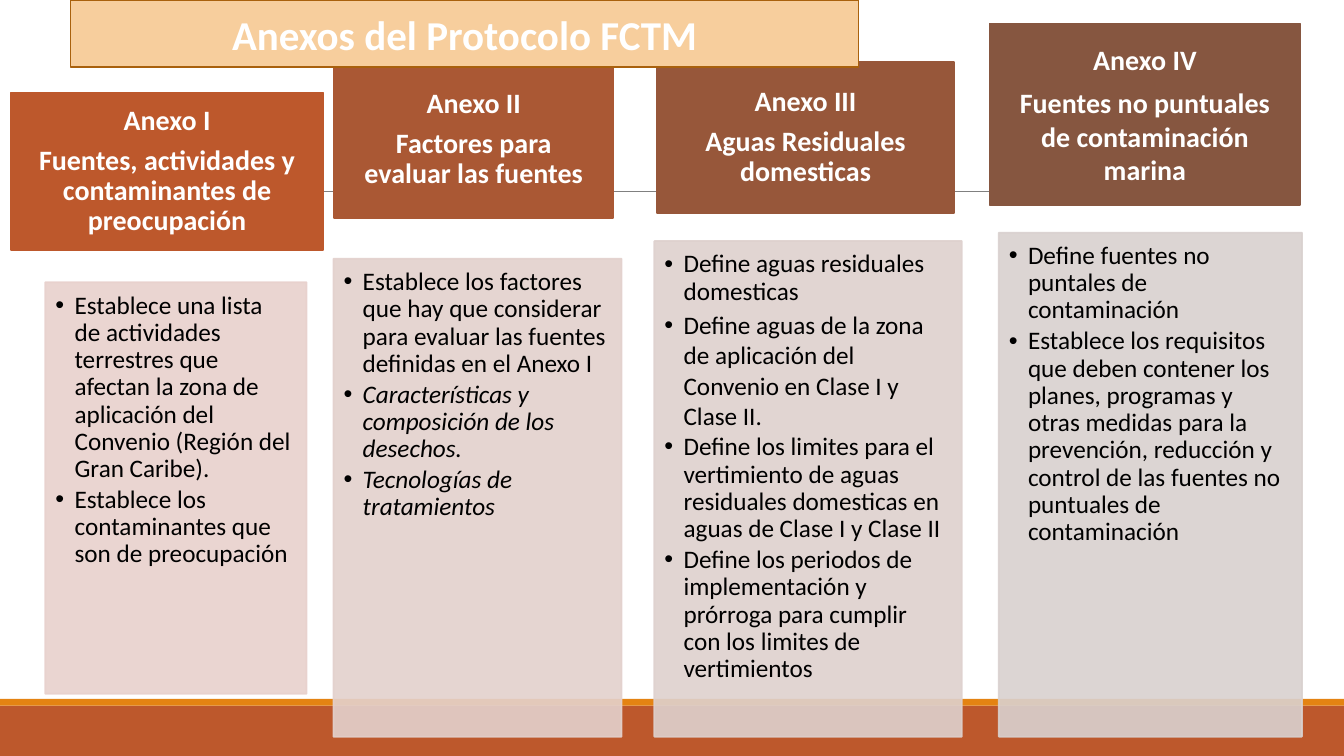
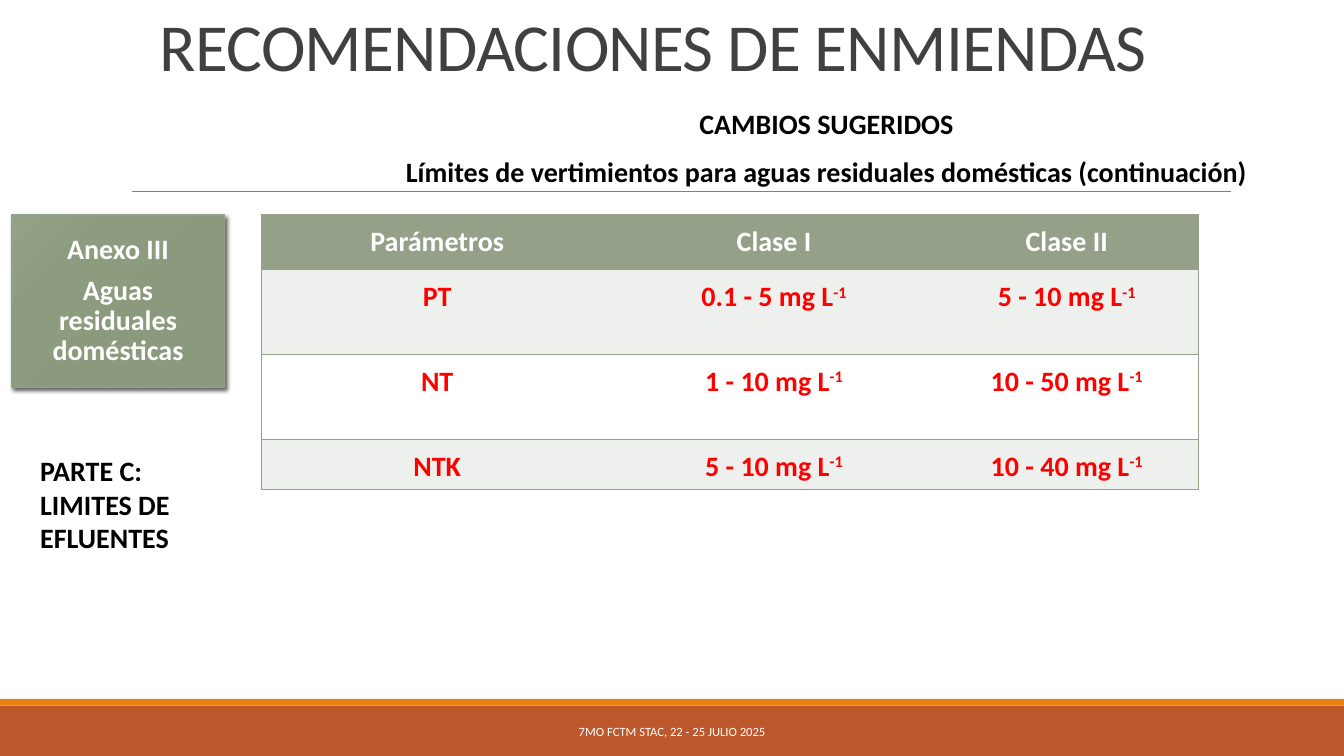
from dataclasses import dataclass

from pptx import Presentation
from pptx import util as u
from pptx.dml.color import RGBColor
from pptx.enum import shapes, text
from pptx.oxml import parse_xml
from pptx.oxml.ns import nsdecls, qn

SHAPE = shapes.MSO_SHAPE
CENTER, LEFT = text.PP_ALIGN.CENTER, text.PP_ALIGN.LEFT
TOP, MIDDLE, BOTTOM = (text.MSO_ANCHOR.TOP, text.MSO_ANCHOR.MIDDLE,
                       text.MSO_ANCHOR.BOTTOM)
NO_STYLE = "{2D5ABB26-0587-4C30-8999-92F81FD0307C}"


@dataclass(frozen=True)
class Theme:
    # Colours
    white: str = "FFFFFF"
    black: str = "000000"
    rust: str = "BD582C"
    orange: str = "E48312"
    rule: str = "808080"
    peach: str = "F7CE9D"
    peach_line: str = "A9610D"
    title: str = "404040"
    sage: str = "94A088"
    pale_sage: str = "EEF0ED"
    red: str = "FF0000"
    # Type
    font: str = "Calibri"
    title_size: float = 48
    banner_size: float = 29.3
    head_size: float = 20
    list_size: float = 18
    footer_size: float = 9


T = Theme()
COLS, ROWS = 160, 90  # grid of square cells over the slide

HEAD_BOX = (0.16, 0.09, 0.16, 0.09)
PANEL_BOX = (0.1, 0.1, 0.14, 0.16)
PLAIN_BOX = (0.1, 0.05, 0.1, 0.05)


def para_format(align=LEFT, spacing=1.0, after=0):
    return {"alignment": align, "line_spacing": spacing,
            "space_before": u.Pt(0), "space_after": u.Pt(after)}


def a_xml(tag, body="", attrs=""):
    return parse_xml(f"<a:{tag} {nsdecls('a')} {attrs}>{body}</a:{tag}>")


class Deck:
    """Holds the presentation, its style and the current slide."""

    def __init__(self):
        self.prs = Presentation()
        self.prs.slide_width, self.prs.slide_height = u.Inches(13.333), u.Inches(7.5)
        self.cell = self.prs.slide_width / COLS
        self.s = None

    def new_slide(self, layout):
        self.s = self.prs.slides.add_slide(self.prs.slide_layouts.get_by_name(layout))

    def grid(self, *cells):
        return [round(c * self.cell) for c in cells]

    def to_master(self, *parts):
        """Move parts of the current slide to the master, behind everything."""
        tree = self.prs.slide_master.shapes.element
        for i, sp in enumerate(parts):
            el = sp.element
            el.xpath(".//p:cNvPr")[0].set("id", str(100 + i))
            tree.insert(2 + i, el)

    # Style helpers
    def place(self, sp, at):
        for name, value in zip(("left", "top", "width", "height"), self.grid(*at)):
            setattr(sp, name, value)

    def paint(self, sp, fill, line=None, width=1.25, alpha=None):
        sp.fill.solid()
        sp.fill.fore_color.rgb = RGBColor.from_string(fill)
        if line:
            sp.line.color.rgb = RGBColor.from_string(line)
            sp.line.width = u.Pt(width)
        else:
            sp.line.fill.background()
        if alpha:
            for clr in sp.element.spPr.iter(qn("a:srgbClr")):
                clr.append(a_xml("alpha", attrs=f'val="{alpha * 1000}"'))

    def frame(self, tf, box=PLAIN_BOX, anchor=TOP):
        sides = ("margin_left", "margin_top", "margin_right", "margin_bottom")
        fmt = dict(zip(sides, map(u.Inches, box)), word_wrap=True,
                   auto_size=text.MSO_AUTO_SIZE.NONE, vertical_anchor=anchor)
        for name, value in fmt.items():
            setattr(tf, name, value)

    def put_text(self, tf, paras, size, color, fmt, bold=True, bullet=False):
        """Each item is text or (text, paragraph format, font format); ^ raises."""
        for i, item in enumerate(paras):
            words, p_fmt, r_fmt = (item, {}, {}) if isinstance(item, str) else item
            p = tf.add_paragraph() if i else tf.paragraphs[0]
            for name, value in {**fmt, **p_fmt}.items():
                setattr(p, name, value)
            if bullet:
                pPr = p._p.get_or_add_pPr()
                pPr.set("marL", str(u.Inches(0.19)))
                pPr.set("indent", str(-u.Inches(0.19)))
                pPr.append(a_xml("buFont", attrs='typeface="Arial"'))
                pPr.append(a_xml("buChar", attrs='char="•"'))
            font = {"name": T.font, "size": u.Pt(size), "bold": bold, **r_fmt}
            for j, part in enumerate(words.split("^")):
                r = p.add_run()
                r.text = part
                for name, value in font.items():
                    setattr(r.font, name, value)
                r.font.color.rgb = RGBColor.from_string(color)
                if j % 2:
                    r.font._element.set("baseline", "30000")

    # Elements
    def rect(self, at, fill, line=None, width=1.25):
        sp = self.s.shapes.add_shape(SHAPE.RECTANGLE, *self.grid(*at))
        sp.shadow.inherit = False
        self.paint(sp, fill, line, width)
        return sp

    def rule(self, x1, x2, y):
        ln = self.s.shapes.add_connector(shapes.MSO_CONNECTOR.STRAIGHT,
                                         *self.grid(x1, y, x2, y))
        ln.line.color.rgb = RGBColor.from_string(T.rule)
        ln.line.width = u.Pt(0.5)
        ln.element.spPr.append(a_xml("effectLst"))
        return ln

    def title(self, words, at):
        sp = self.s.shapes.title
        self.place(sp, at)
        self.frame(sp.text_frame, anchor=BOTTOM)
        self.put_text(sp.text_frame, [words], T.title_size, T.title,
                      para_format(spacing=0.85), bold=False)
        sp.text_frame.paragraphs[0].runs[0].font._element.set("spc", "-50")

    def banner(self, words, at):
        """Title in a rounded box, in front of the other parts."""
        sp = self.s.shapes.title
        self.place(sp, at)
        sp.element.spPr.append(a_xml("prstGeom", "<a:avLst/>", 'prst="roundRect"'))
        self.paint(sp, T.peach, T.peach_line)
        self.frame(sp.text_frame, anchor=MIDDLE)
        self.put_text(sp.text_frame, [words], T.banner_size, T.white,
                      para_format(CENTER))
        self.s.shapes.element.append(sp.element)

    def heading(self, at, fill, lines, spacing=0.9, line=None, width=1.25):
        sp = self.rect(at, fill, line or fill, width)
        self.frame(sp.text_frame, HEAD_BOX, MIDDLE)
        self.put_text(sp.text_frame, lines, T.head_size, T.white,
                      para_format(CENTER, spacing, 7))
        return sp

    def panel(self, idx, at, fill, items):
        """Bulleted list in a body placeholder with a translucent fill."""
        sp = self.s.placeholders[idx]
        self.place(sp, at)
        self.paint(sp, fill, fill, alpha=90)
        self.frame(sp.text_frame, PANEL_BOX)
        self.put_text(sp.text_frame, items, T.list_size, T.black,
                      para_format(spacing=0.9, after=2.7), bold=False, bullet=True)

    def badge(self, at, lines):
        """Heading with a radial gradient and a soft shadow over a rust plate."""
        self.rect(at, T.rust, T.rust)
        sp = self.heading(at, T.sage, lines, line=T.sage, width=1)
        stops = "".join(
            f'<a:gs pos="{pos * 1000}"><a:srgbClr val="{c}"/></a:gs>' for pos, c in
            ((0, "8A987B"), (34, "8B997D"), (70, "8D9C7E"), (100, "94A187")))
        spPr = sp.element.spPr
        spPr.replace(spPr.find(qn("a:solidFill")), a_xml(
            "gradFill", f'<a:gsLst>{stops}</a:gsLst><a:path path="circle">'
            '<a:fillToRect l="100000" t="100000" r="0" b="0"/></a:path>'))
        spPr.replace(spPr.find(qn("a:effectLst")), a_xml(
            "effectLst", f'<a:outerShdw blurRad="{u.Pt(3)}" dist="{u.Pt(2)}" '
            'dir="2700000"><a:srgbClr val="000000"><a:alpha val="60000"/>'
            '</a:srgbClr></a:outerShdw>'))

    def label(self, at, paras, size, color, fmt, anchor=TOP, bold=True):
        sp = self.s.shapes.add_textbox(*self.grid(*at))
        self.frame(sp.text_frame, anchor=anchor)
        self.put_text(sp.text_frame, paras, size, color, fmt, bold)

    def table(self, x, y, widths, heights, rows):
        at = self.grid(x, y, sum(widths), sum(heights))
        tbl = self.s.shapes.add_table(len(rows), len(widths), *at).table
        tbl._tbl.tblPr.find(qn("a:tableStyleId")).text = NO_STYLE
        for col, width in zip(tbl.columns, self.grid(*widths)):
            col.width = width
        for i, (row, height) in enumerate(zip(rows, self.grid(*heights))):
            tbl.rows[i].height = height
            fill = T.sage if i == 0 else T.pale_sage if i % 2 else T.white
            for j, words in enumerate(row):
                cell = tbl.cell(i, j)
                self.put_text(cell.text_frame, [words], T.head_size,
                              T.red if i else T.white, para_format(CENTER, 1.15, 6))
                # Borders come before the fill
                sides = {"lnL": j == 0, "lnR": j == len(row) - 1,
                         "lnT": True, "lnB": True}
                for side in (k for k, drawn in sides.items() if drawn):
                    cell._tc.get_or_add_tcPr().append(a_xml(
                        side, f'<a:solidFill><a:srgbClr val="{T.sage}"/></a:solidFill>',
                        f'w="{u.Pt(1)}"'))
                cell.fill.solid()
                cell.fill.fore_color.rgb = RGBColor.from_string(fill)


# Columns of the first slide: heading (place, fill, spacing, lines), panel
ANNEXES = [
    ((1.3, 11, 37.2, 18.8), "BD582C", 0.9,
     ["Anexo I", "Fuentes, actividades y contaminantes de preocupación"],
     (5.4, 33.6, 31.1, 49), "E8D1CD",
     ["Establece una lista de actividades terrestres que afectan la zona de "
      "aplicación del Convenio (Región del Gran Caribe).",
      "Establece los contaminantes que son de preocupación"]),
    ((39.8, 7.2, 33.2, 18.8), "AA5834", 0.9,
     ["Anexo II", "Factores para evaluar las fuentes"],
     (39.7, 30.8, 34.3, 56.9), "E3D1CD",
     ["Establece los factores que hay que considerar para evaluar las fuentes "
      "definidas en el Anexo I",
      ("Características y composición de los desechos.", {}, {"italic": True}),
      ("Tecnologías de tratamientos", {}, {"italic": True})]),
    ((78.2, 7.4, 35.4, 18), "97573A", 0.9,
     ["Anexo III", "Aguas Residuales domesticas"],
     (77.9, 28.7, 36.6, 59), "DED1CE",
     ["Define aguas residuales domesticas",
      ("Define aguas de la zona de aplicación del Convenio en Clase I y Clase II.",
       {"line_spacing": 1.0}, {}),
      "Define los limites para el vertimiento de aguas residuales domesticas en "
      "aguas de Clase I y Clase II",
      "Define los periodos de implementación y prórroga para cumplir con los "
      "limites de vertimientos"]),
    ((117.8, 2.8, 37, 21.6), "865640", 1.0,
     ["Anexo IV", "Fuentes no puntuales de contaminación marina"],
     (118.9, 27.7, 36.1, 60), "D9D1CF",
     ["Define fuentes no puntales de contaminación",
      "Establece los requisitos que deben contener los planes, programas y otras "
      "medidas para la prevención, reducción y control de las fuentes no puntuales "
      "de contaminación"]),
]

LIMITS = [
    ("Parámetros", "Clase I", "Clase II"),
    ("PT", "0.1 - 5 mg L^-1", "5 - 10 mg L^-1"),
    ("NT", "1 - 10 mg L^-1", "10 - 50 mg L^-1"),
    ("NTK", "5 - 10 mg L^-1", "10 - 40 mg L^-1"),
]


def main():
    d = Deck()

    # Annexes; the bands and the rule go to the master
    d.new_slide("Comparison")
    d.to_master(d.rect((0, 84, COLS, ROWS - 84), T.rust),
                d.rect((0, 83.2, COLS, 0.8), T.orange),
                d.rule(15.7, 146.5, 22.8))
    for idx, (at, fill, spacing, lines, panel_at, tint, items) in enumerate(ANNEXES, 1):
        d.heading(at, fill, lines, spacing)
        d.panel(idx, panel_at, tint, items)
    d.banner("Anexos del Protocolo FCTM", (8.4, 0, 93.8, 8))

    # Suggested amendments
    d.new_slide("Title Only")
    d.title("RECOMENDACIONES DE ENMIENDAS", (17.8, 0.5, 133.3, 10.3))
    d.label((48.4, 84.7, 63.2, 4.8), ["7MO FCTM STAC, 22 - 25 JULIO 2025"],
            T.footer_size, T.white, para_format(CENTER), MIDDLE, bold=False)
    d.badge((1.4, 25.6, 25.3, 20.5), ["Anexo III", "Aguas residuales domésticas"])
    d.label((3.6, 53.4, 22.1, 19.4), ["PARTE C: LIMITES DE EFLUENTES"],
            T.head_size, T.black, para_format(after=10))
    d.label((44.1, 12.1, 108.6, 10.9),
            ["CAMBIOS SUGERIDOS",
             "Límites de vertimientos para aguas residuales domésticas (continuación)"],
            T.head_size, T.black, para_format(CENTER, after=10))
    d.table(31.1, 25.6, (41.9, 38.3, 31.4), (6.5, 10.1, 10.1, 6), LIMITS)

    d.prs.save("out.pptx")


if __name__ == "__main__":
    main()
